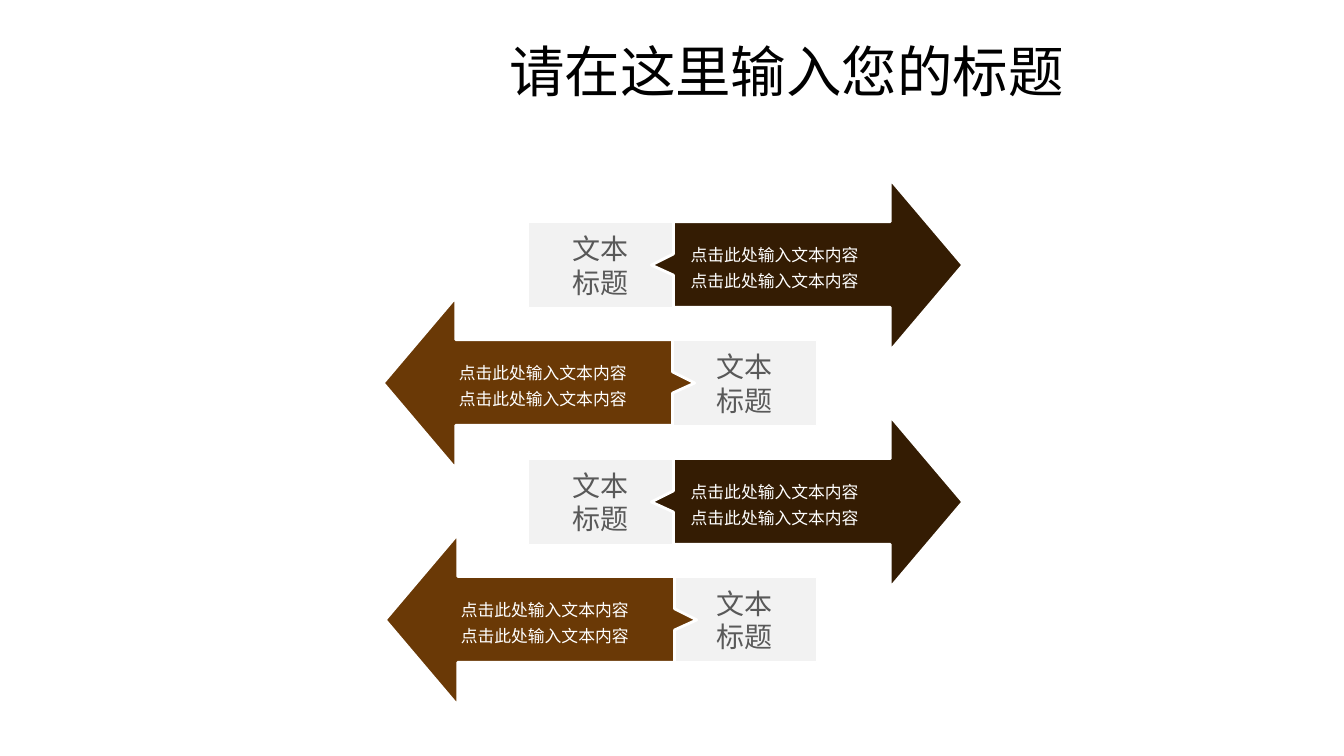
"""Build a slide of four alternating arrows with captions."""
from dataclasses import dataclass

from pptx import Presentation
from pptx import util as u
from pptx.dml.color import RGBColor
from pptx.enum import shapes, text
from pptx.oxml import parse_xml
from pptx.oxml.ns import nsdecls

PX = 9144


@dataclass(frozen=True)
class Theme:
    """Colours, fonts and type sizes of the slide."""
    white: str = "FFFFFF"
    black: str = "000000"
    panel: str = "F2F2F2"
    caption: str = "595959"
    dark: str = "341C03"
    brown: str = "6A3906"
    title_font: str = "Calibri"
    body_font: str = "Noto Sans CJK SC"
    title_size: float = 39.6
    caption_size: float = 20
    body_size: float = 12


THEME = Theme()
TITLE = "请在这里输入您的标题"
CAPTION = ["文本", "标题"]
CONTENT = ["点击此处输入文本内容"] * 2
ROW_PITCH = 117.5
PANEL_TOP, PANEL_W, PANEL_H = 221, 143, 84
ARROW_TOP, ARROW_W = 178, 309
OUTLINE = [(237, 0), (309, 85), (237, 170), (237, 127), (22, 127),
           (22, 95), (0, 85), (22, 74), (22, 42), (237, 42)]
RIGHT_INSETS, LEFT_INSETS = (39, 79), (75, 39)
ROWS = [(524, 646, True), (667, 380, False), (524, 646, True), (667, 382, False)]


def px(length):
    """Turn px into EMU."""
    return u.Emu(int(length * PX))


def assign(target, **values):
    """Set each named attribute on the target."""
    for name, value in values.items():
        setattr(target, name, value)


def paint(shape, fill, line_width):
    """Give a shape a flat fill and a white outline."""
    shape.shadow.inherit = False
    shape.fill.solid()
    shape.fill.fore_color.rgb = RGBColor.from_string(fill)
    shape.line.color.rgb = RGBColor.from_string(THEME.white)
    shape.line.width = u.Pt(line_width)


def write(shape, lines, font, size, color, align, spacing=1.0):
    """Write one paragraph per line, in one style."""
    frame = shape.text_frame
    assign(frame, word_wrap=True, auto_size=text.MSO_AUTO_SIZE.NONE,
           vertical_anchor=text.MSO_ANCHOR.MIDDLE)
    for index, line in enumerate(lines):
        para = frame.add_paragraph() if index else frame.paragraphs[0]
        assign(para, alignment=align, line_spacing=spacing)
        span = para.add_run()
        span.text = line
        assign(span.font, name=font, size=u.Pt(size))
        span.font.color.rgb = RGBColor.from_string(color)
        span.font._element.find("{*}latin").addnext(
            parse_xml(f'<a:ea {nsdecls("a")} typeface="{THEME.body_font}"/>'))


def add_title(page):
    """Place and fill the title."""
    box = page.shapes.title
    assign(box, left=px(495), top=px(41), width=px(857), height=px(66))
    write(box, [TITLE], THEME.title_font, THEME.title_size, THEME.black,
          text.PP_ALIGN.LEFT, 0.9)


def add_panel(page, left, top):
    """Add a grey caption panel."""
    panel = page.shapes.add_shape(shapes.MSO_SHAPE.RECTANGLE, px(left), px(top),
                                  px(PANEL_W), px(PANEL_H))
    paint(panel, THEME.panel, 1)
    write(panel, CAPTION, THEME.body_font, THEME.caption_size, THEME.caption,
          text.PP_ALIGN.CENTER)


def add_arrow(page, left, top, points_right):
    """Add a notched arrow, mirrored when it points left."""
    points = [(left + (x if points_right else ARROW_W - x), top + y)
              for x, y in OUTLINE]
    builder = page.shapes.build_freeform(*points[0], scale=PX)
    builder.add_line_segments(points[1:], close=True)
    arrow = builder.convert_to_shape()
    paint(arrow, THEME.dark if points_right else THEME.brown, 2)
    inset_left, inset_right = RIGHT_INSETS if points_right else LEFT_INSETS
    assign(arrow.text_frame, margin_left=px(inset_left),
           margin_right=px(inset_right), margin_top=0, margin_bottom=0)
    write(arrow, CONTENT, THEME.body_font, THEME.body_size, THEME.white,
          text.PP_ALIGN.JUSTIFY, 1.3)


def main():
    """Build and save the deck."""
    deck = Presentation()
    assign(deck, slide_width=u.Inches(13.33), slide_height=u.Inches(7.5))
    page = deck.slides.add_slide(deck.slide_layouts.get_by_name("Title Only"))
    add_title(page)
    for row, (panel_left, arrow_left, points_right) in enumerate(ROWS):
        offset = int(row * ROW_PITCH)
        add_panel(page, panel_left, PANEL_TOP + offset)
        add_arrow(page, arrow_left, ARROW_TOP + offset, points_right)
    deck.save("out.pptx")


if __name__ == "__main__":
    main()
